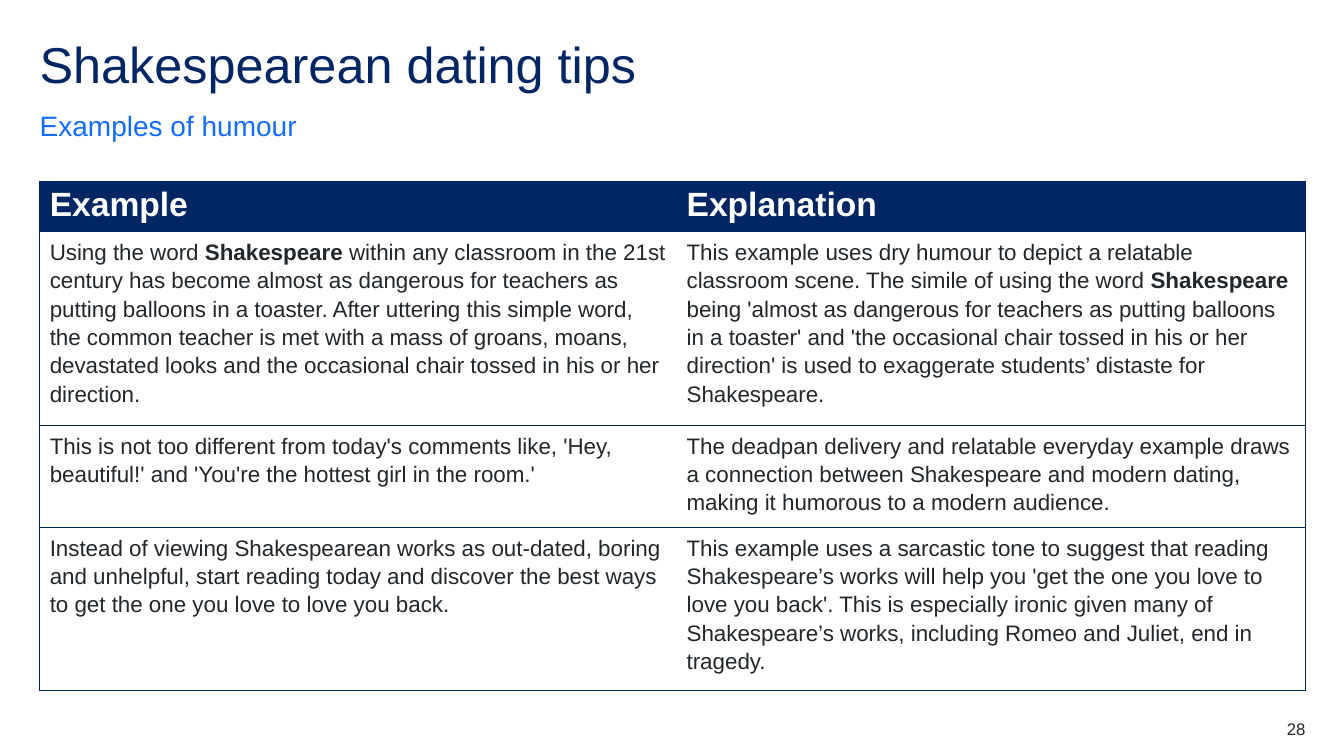
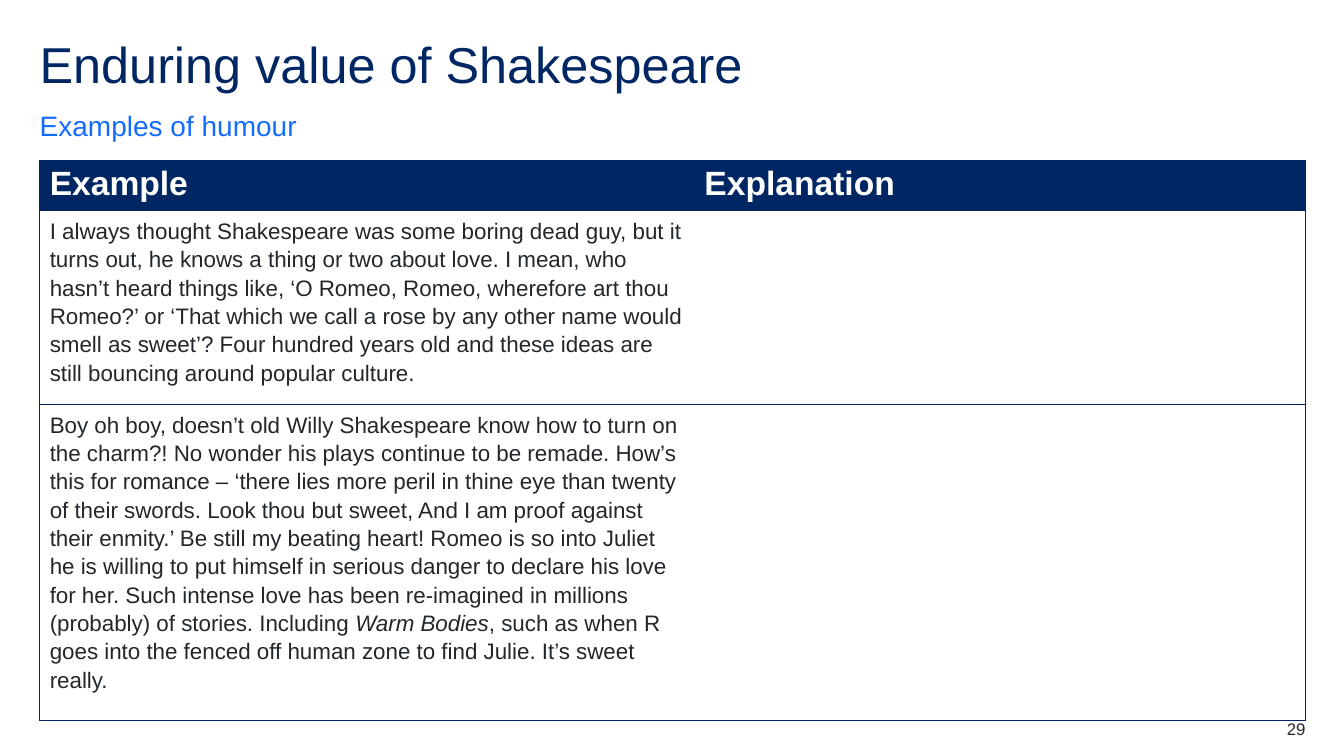
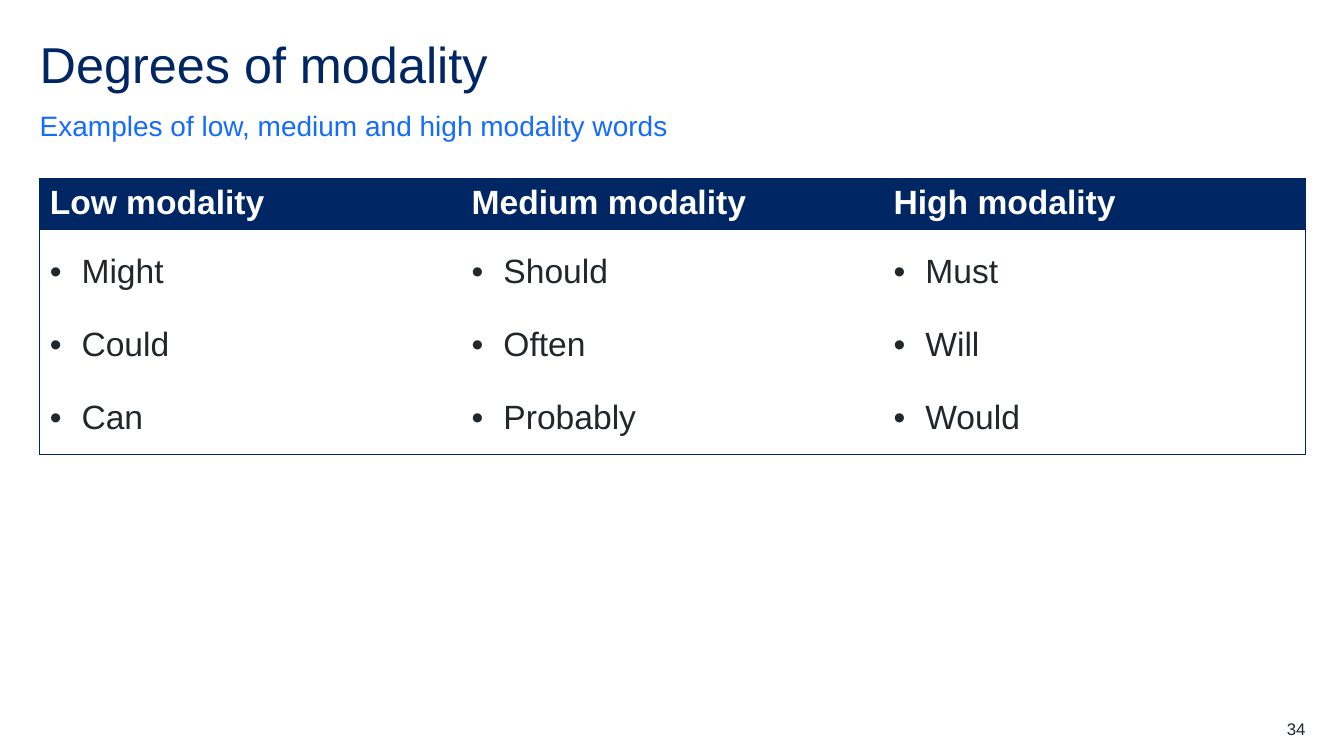
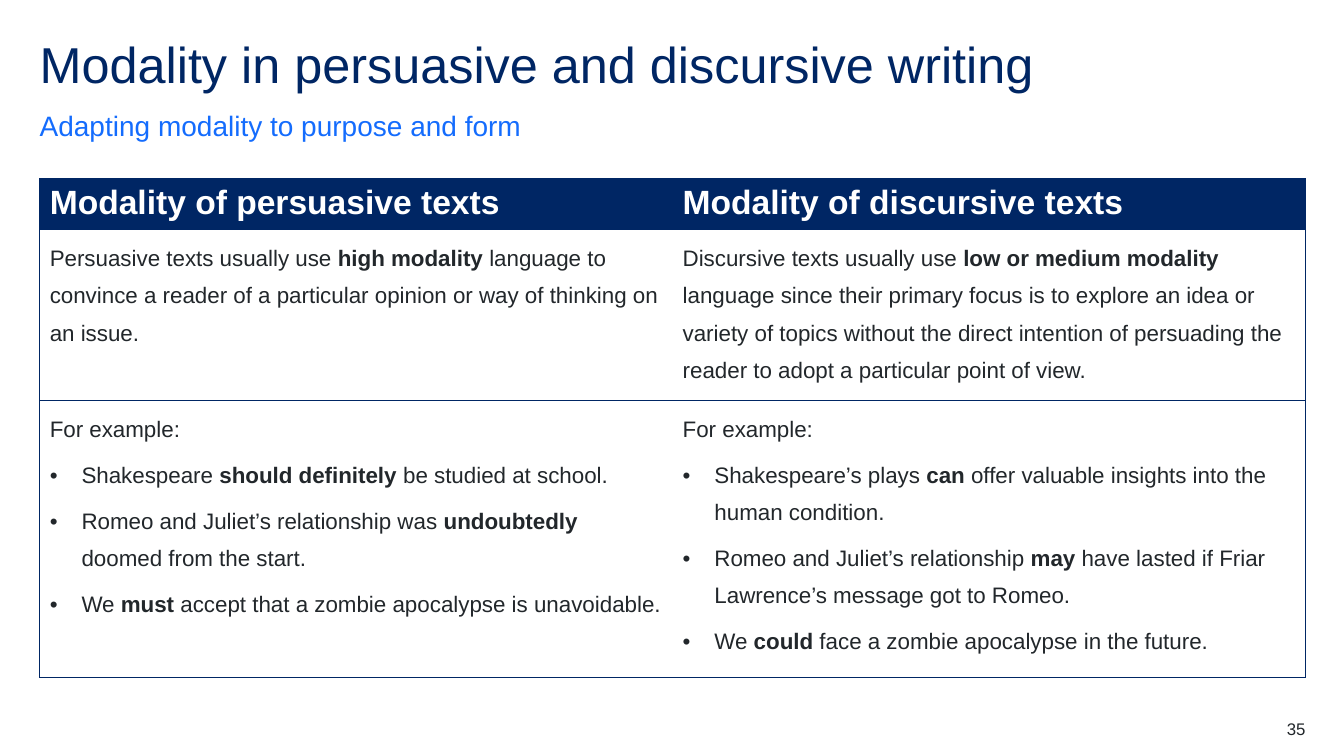
from lxml.etree import SubElement
from pptx import Presentation
from pptx.dml.color import RGBColor
from pptx.enum.text import MSO_ANCHOR, PP_ALIGN
from pptx.oxml.ns import qn
from pptx.util import Cm, Pt

NAVY = RGBColor(0x00, 0x26, 0x64)
BLUE = RGBColor(0x14, 0x6C, 0xFD)
INK = RGBColor(0x22, 0x27, 0x2B)
WHITE = RGBColor(0xFF, 0xFF, 0xFF)
FONT = "Arial"
MARGIN = 1
CONTENT_WIDTH = 31.9
HEADER_HEIGHT = 1.2
BULLET = "• "
PLAIN_TABLE_STYLE = "{2D5ABB26-0587-4C30-8999-92F81FD0307C}"


class Deck:
    def __init__(self):
        self.presentation = Presentation()
        self.presentation.slide_width = Cm(33.87)
        self.presentation.slide_height = Cm(19.05)
        self.slide = None

    def add_slide(self, title, subtitle, number):
        blank = self.presentation.slide_layouts[6]
        self.slide = self.presentation.slides.add_slide(blank)
        self.add_text(title, 1, 1.53, 36, NAVY, line_spacing=0.9)
        self.add_text(subtitle, 2.72, 0.86, 20, BLUE, line_spacing=1.5, anchor=MSO_ANCHOR.BOTTOM)
        self.add_text(str(number), 18.1, 0.5, 12, INK, align=PP_ALIGN.RIGHT)

    def add_text(self, text, top, height, size, color, line_spacing=1.0,
                 anchor=MSO_ANCHOR.TOP, align=PP_ALIGN.LEFT):
        box = self.slide.shapes.add_textbox(Cm(MARGIN), Cm(top), Cm(CONTENT_WIDTH), Cm(height))
        frame = box.text_frame
        frame.word_wrap = True
        frame.vertical_anchor = anchor
        frame.margin_left = frame.margin_right = frame.margin_top = frame.margin_bottom = 0
        paragraph = frame.paragraphs[0]
        paragraph.alignment = align
        paragraph.line_spacing = line_spacing
        self.add_runs(paragraph, text, size, color)

    def add_runs(self, paragraph, text, size, color, bold=False):
        for bold_index, part in enumerate(text.split("*")):
            for italic_index, piece in enumerate(part.split("_")):
                if piece:
                    run = paragraph.add_run()
                    run.text = piece
                    run.font.name = FONT
                    run.font.size = Pt(size)
                    run.font.color.rgb = color
                    run.font.bold = bold or bold_index % 2 == 1
                    run.font.italic = italic_index % 2 == 1

    def add_bullet(self, paragraph):
        properties = paragraph._p.get_or_add_pPr()
        properties.set("marL", str(Cm(0.8)))
        properties.set("indent", str(-Cm(0.8)))
        SubElement(properties, qn("a:buFont"), typeface=FONT)
        SubElement(properties, qn("a:buChar"), char=BULLET.strip())

    def add_borders(self, cell, sides):
        properties = cell._tc.get_or_add_tcPr()
        for side in sides:
            line = SubElement(properties, qn(f"a:ln{side}"), w=str(Pt(0.5)))
            fill = SubElement(line, qn("a:solidFill"))
            SubElement(fill, qn("a:srgbClr"), val=str(NAVY))

    def fill_cell(self, cell, paragraphs, size, line_spacing, space_after):
        for index, text in enumerate(paragraphs):
            frame = cell.text_frame
            paragraph = frame.add_paragraph() if index else frame.paragraphs[0]
            paragraph.line_spacing = line_spacing
            paragraph.space_after = Pt(space_after)
            if text.startswith(BULLET):
                self.add_bullet(paragraph)
            self.add_runs(paragraph, text.removeprefix(BULLET), size, INK)

    def add_table(self, top, widths, heights, headers, rows, size=16,
                  line_spacing=1.14, space_after=12):
        heights = [HEADER_HEIGHT, *heights]
        frame = self.slide.shapes.add_table(
            len(heights), len(widths), Cm(MARGIN), Cm(top), Cm(CONTENT_WIDTH), Cm(sum(heights)))
        table = frame.table
        table.horz_banding = False
        table._tbl.tblPr.find(qn("a:tableStyleId")).text = PLAIN_TABLE_STYLE
        for column, width in zip(table.columns, widths):
            column.width = Cm(width)
        for row, height in zip(table.rows, heights):
            row.height = Cm(height)
        last = len(widths) - 1
        for row_index, contents in enumerate([headers, *rows]):
            for column_index, content in enumerate(contents):
                cell = table.cell(row_index, column_index)
                sides = ["L"] * (column_index == 0) + ["R"] * (column_index == last) + ["T", "B"]
                self.add_borders(cell, sides)
                cell.fill.solid()
                cell.fill.fore_color.rgb = WHITE if row_index else NAVY
                if row_index:
                    self.fill_cell(cell, content, size, line_spacing, space_after)
                else:
                    self.add_runs(cell.text_frame.paragraphs[0], content, 24, WHITE, bold=True)


def main():
    deck = Deck()

    deck.add_slide("Shakespearean dating tips", "Examples of humour", 28)
    deck.add_table(4.57, [16.05, 15.85], [4.5, 2.4, 3.8], ["Example", "Explanation"], [
        [["Using the word *Shakespeare* within any classroom in the 21st century has become almost "
          "as dangerous for teachers as putting balloons in a toaster. After uttering this simple "
          "word, the common teacher is met with a mass of groans, moans, devastated looks and the "
          "occasional chair tossed in his or her direction."],
         ["This example uses dry humour to depict a relatable classroom scene. The simile of using "
          "the word *Shakespeare* being 'almost as dangerous for teachers as putting balloons in a "
          "toaster' and 'the occasional chair tossed in his or her direction' is used to exaggerate "
          "students’ distaste for Shakespeare."]],
        [["This is not too different from today's comments like, 'Hey, beautiful!' and 'You're the "
          "hottest girl in the room.'"],
         ["The deadpan delivery and relatable everyday example draws a connection between "
          "Shakespeare and modern dating, making it humorous to a modern audience."]],
        [["Instead of viewing Shakespearean works as out-dated, boring and unhelpful, start reading "
          "today and discover the best ways to get the one you love to love you back."],
         ["This example uses a sarcastic tone to suggest that reading Shakespeare’s works will help "
          "you 'get the one you love to love you back'. This is especially ironic given many of "
          "Shakespeare’s works, including Romeo and Juliet, end in tragedy."]],
    ])

    deck.add_slide("Enduring value of Shakespeare", "Examples of humour", 29)
    deck.add_table(4.04, [16.5, 15.4], [4.5, 7.4], ["Example", "Explanation"], [
        [["I always thought Shakespeare was some boring dead guy, but it turns out, he knows a thing "
          "or two about love. I mean, who hasn’t heard things like, ‘O Romeo, Romeo, wherefore art "
          "thou Romeo?’ or ‘That which we call a rose by any other name would smell as sweet’? Four "
          "hundred years old and these ideas are still bouncing around popular culture."], []],
        [["Boy oh boy, doesn’t old Willy Shakespeare know how to turn on the charm?! No wonder his "
          "plays continue to be remade. How’s this for romance – ‘there lies more peril in thine eye "
          "than twenty of their swords. Look thou but sweet, And I am proof against their enmity.’ "
          "Be still my beating heart! Romeo is so into Juliet he is willing to put himself in "
          "serious danger to declare his love for her. Such intense love has been re-imagined in "
          "millions (probably) of stories. Including _Warm Bodies_, such as when R goes into the "
          "fenced off human zone to find Julie. It’s sweet really."], []],
    ], space_after=0)

    deck.add_slide("Degrees of modality", "Examples of low, medium and high modality words", 34)
    deck.add_table(
        4.5, [CONTENT_WIDTH / 3] * 3, [5.35],
        ["Low modality", "Medium modality", "High modality"],
        [[["• Might", "• Could", "• Can"],
          ["• Should", "• Often", "• Probably"],
          ["• Must", "• Will", "• Would"]]],
        size=24, line_spacing=1.5)

    deck.add_slide("Modality in persuasive and discursive writing",
                   "Adapting modality to purpose and form", 35)
    deck.add_table(
        4.5, [CONTENT_WIDTH / 2] * 2, [4, 6.75],
        ["Modality of persuasive texts", "Modality of discursive texts"], [
            [["Persuasive texts usually use *high modality *language to convince a reader of a "
              "particular opinion or way of thinking on an issue."],
             ["Discursive texts usually use *low or medium modality *language since their primary "
              "focus is to explore an idea or variety of topics without the direct intention of "
              "persuading the reader to adopt a particular point of view."]],
            [["For example:",
              "• Shakespeare *should definitely *be studied at school.",
              "• Romeo and Juliet’s relationship was *undoubtedly* doomed from the start.",
              "• We *must* accept that a zombie apocalypse is unavoidable."],
             ["For example:",
              "• Shakespeare’s plays *can* offer valuable insights into the human condition.",
              "• Romeo and Juliet’s relationship *may* have lasted if Friar Lawrence’s message got "
              "to Romeo.",
              "• We *could* face a zombie apocalypse in the future."]],
        ], line_spacing=1.5, space_after=6)

    deck.presentation.save("out.pptx")


if __name__ == "__main__":
    main()
